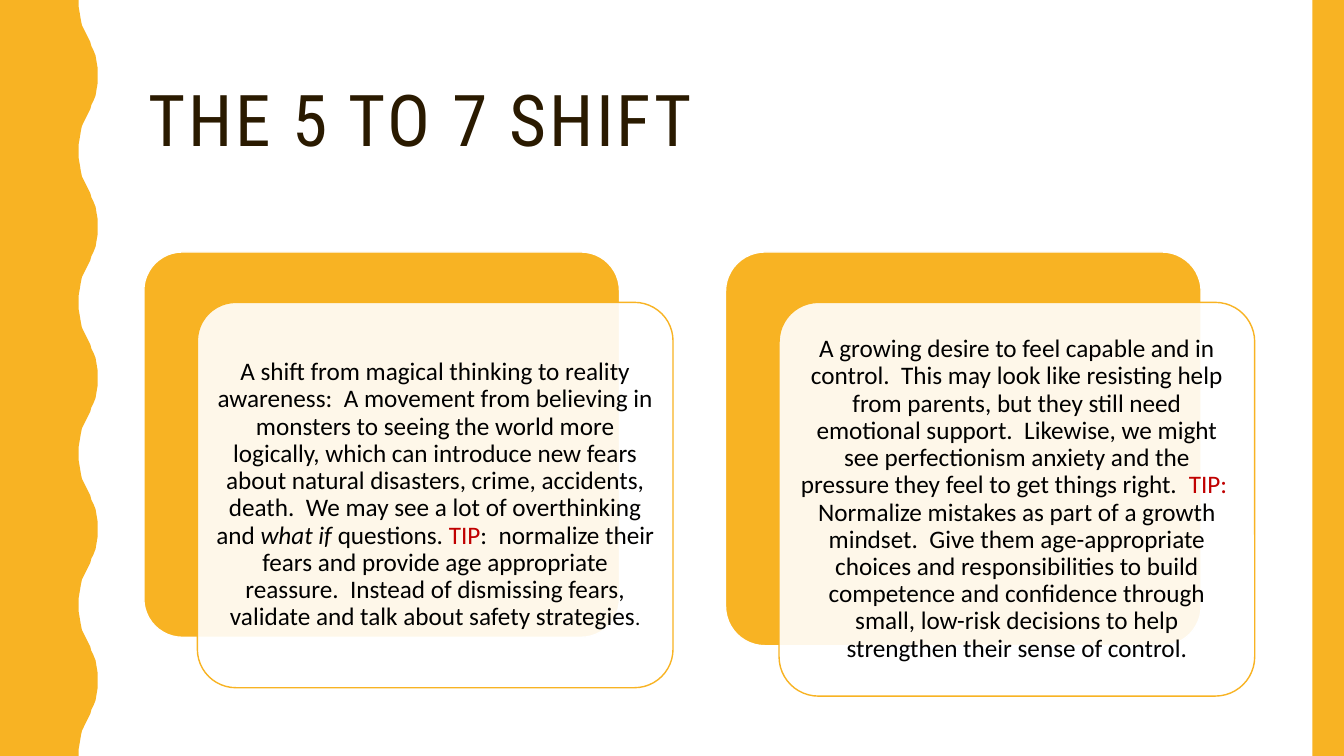
import pptx
import pptx.dml.color
import pptx.enum.shapes
import pptx.enum.text
import pptx.oxml.ns
import pptx.util
import lxml.etree

PX = 9525
WIDE, HIGH = 1280, 720
GOLD, WHITE, BROWN, BLACK, RED = "F8B323", "FFFFFF", "2A1A00", "000000", "C00000"
KIND = pptx.enum.shapes.MSO_SHAPE
ALIGN = pptx.enum.text.PP_ALIGN
WAVE = [(75, 0), (75, 7), (76, 13), (77, 19), (78, 24), (80, 28), (82, 32), (84, 36),
        (86, 40), (87, 44), (89, 48), (91, 53), (92, 59), (93, 65), (93, 72)]
CYCLE = 144

CARDS = [
    (137, 367, [
        ("A shift from magical thinking to reality awareness:  A movement from believing in "
         "monsters to seeing the world more logically, which can introduce new fears about "
         "natural disasters, crime, accidents, death.  We may see a lot of overthinking and ",
         BLACK, 18, False),
        ("what if ", BLACK, 18, True),
        ("questions. ", BLACK, 18, False),
        ("TIP", RED, 18, False),
        (":  normalize their fears and provide age appropriate reassure.  Instead of "
         "dismissing fears, validate and talk about safety strategies", BLACK, 18, False),
        (".", BLACK, 15, False),
    ]),
    (691, 375, [
        ("A growing desire to feel capable and in control.  This may look like resisting help "
         "from parents, but they still need emotional support.  Likewise, we might see "
         "perfectionism anxiety and the pressure they feel to get things right.  ",
         BLACK, 18, False),
        ("TIP:  ", RED, 18, False),
        ("Normalize mistakes as part of a growth mindset.  Give them age-appropriate choices "
         "and responsibilities to build competence and confidence through small, low-risk "
         "decisions to help strengthen their sense of control.", BLACK, 18, False),
    ]),
]


def color(code):
    return pptx.dml.color.RGBColor.from_string(code)


def emu(*sizes):
    return [size * PX for size in sizes]


def paint(shape, fill, line=None):
    shape.shadow.inherit = False
    shape.fill.solid()
    shape.fill.fore_color.rgb = color(fill)
    if line:
        shape.line.color.rgb = color(line)
        shape.line.width = pptx.util.Pt(1)
    else:
        shape.line.fill.background()


def fade(shape, share):
    tone = shape.fill._xPr.find(".//" + pptx.oxml.ns.qn("a:srgbClr"))
    alpha = lxml.etree.SubElement(tone, pptx.oxml.ns.qn("a:alpha"))
    alpha.set("val", str(share * 1000))


def add_wave(slide):
    back = [(x, CYCLE - y) for x, y in reversed(WAVE[1:-1])]
    edge = [(x, y + top) for top in range(0, HIGH, CYCLE) for x, y in WAVE + back]
    pen = slide.shapes.build_freeform(0, 0, scale=PX)
    pen.add_line_segments(edge + [(WAVE[0][0], HIGH), (0, HIGH)], close=True)
    paint(pen.convert_to_shape(), GOLD)


def add_box(slide, kind, place, fill, line=None):
    box = slide.shapes.add_shape(kind, *emu(*place))
    paint(box, fill, line)
    return box


def add_round(slide, place, fill, line):
    box = add_box(slide, KIND.ROUNDED_RECTANGLE, place, fill, line)
    box.adjustments[0] = 0.1
    return box


def add_text(slide, place, runs, font, align, inset=None, gap=None):
    frame = slide.shapes.add_textbox(*emu(*place)).text_frame
    frame.word_wrap = True
    frame.vertical_anchor = pptx.enum.text.MSO_ANCHOR.MIDDLE
    if inset is not None:
        frame.margin_left = frame.margin_right = inset * PX
        frame.margin_top = frame.margin_bottom = inset * PX
    para = frame.paragraphs[0]
    para.alignment = align
    para.line_spacing = 0.9
    for words, tint, size, slant in runs:
        run = para.add_run()
        run.text = words
        run.font.name = font
        run.font.size = pptx.util.Pt(size)
        run.font.italic = slant
        run.font.color.rgb = color(tint)
        if gap:
            run.font._element.set("spc", str(gap * 100))


def add_card(slide, left, high, runs):
    top, wide, pad = 240, 453, 11
    add_round(slide, (left, top, wide, high), GOLD, WHITE)
    left, top = left + 51, top + 48
    front = add_round(slide, (left, top, wide, high), WHITE, GOLD)
    fade(front, 90)
    place = (left + pad, top + pad, wide - 2 * pad, high - 2 * pad)
    add_text(slide, place, runs, "Calibri", ALIGN.CENTER, inset=7)


def main():
    deck = pptx.Presentation()
    deck.slide_width, deck.slide_height = emu(WIDE, HIGH)
    slide = deck.slides.add_slide(deck.slide_layouts[6])
    slide.background.fill.solid()
    slide.background.fill.fore_color.rgb = color(WHITE)
    add_text(slide, (132, 40, 1068, 156), [("THE 5 TO 7 SHIFT", BROWN, 51, False)],
             "Roboto Condensed", ALIGN.LEFT, gap=2)
    add_wave(slide)
    add_box(slide, KIND.RECTANGLE, (1250, 0, 30, HIGH), GOLD)
    for left, high, runs in CARDS:
        add_card(slide, left, high, runs)
    deck.save("out.pptx")


if __name__ == "__main__":
    main()
